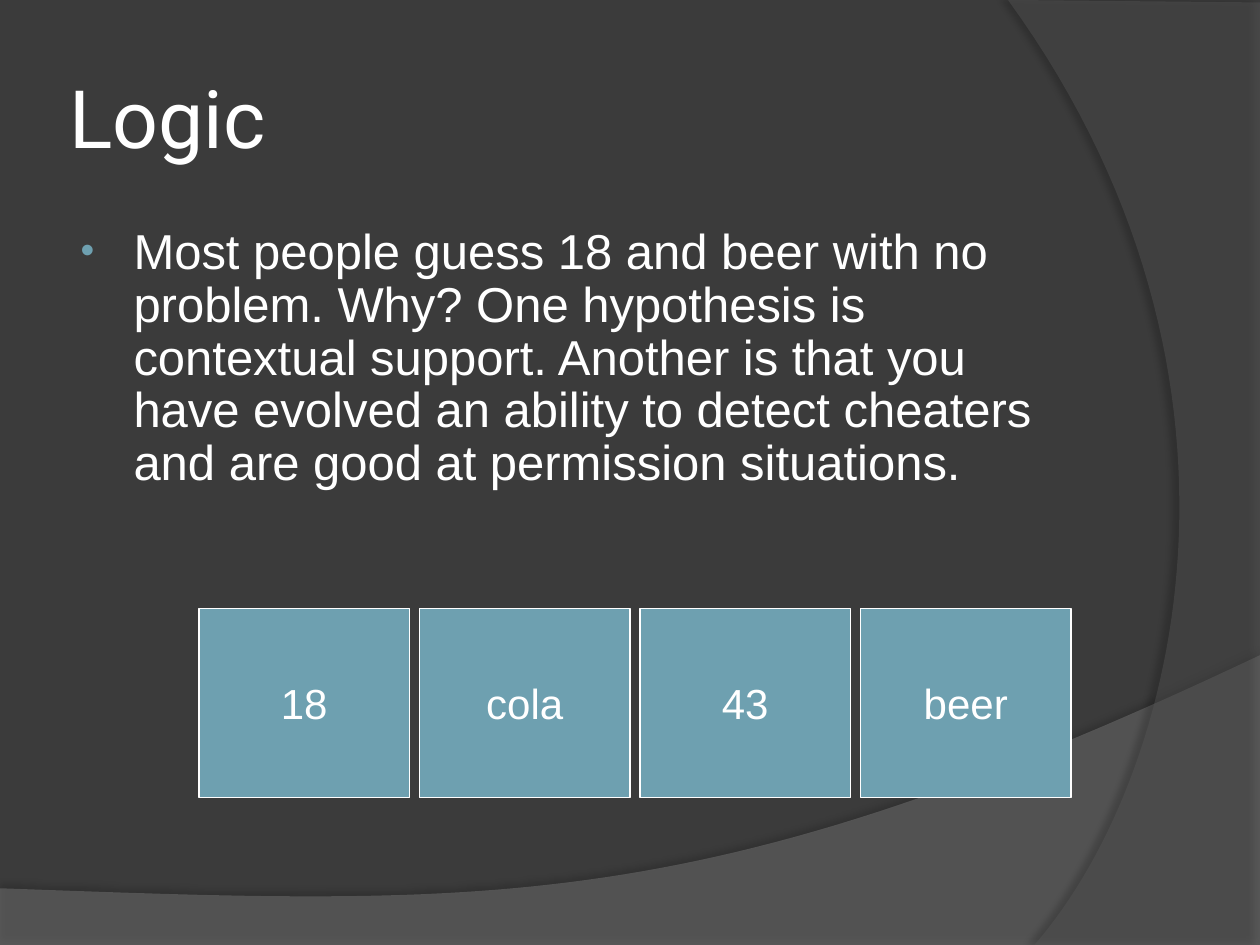
"""Build the Logic slide: a title, one bullet and four cards."""
from dataclasses import dataclass

from lxml import etree
from pptx import Presentation
from pptx import util as u
from pptx.dml.color import RGBColor
from pptx.enum import shapes, text
from pptx.oxml.ns import qn

PX = u.Inches(1) // 100


@dataclass(frozen=True)
class Theme:
    back: str = "3B3B3B"
    wave: str = "7C7C7C"
    arc: str = "595959"
    card: str = "6EA0B0"
    ink: str = "FFFFFF"
    shade: str = "000000"
    head: int = 46
    body: int = 28
    label: int = 24
    face: str = "Arial"
    title: str = "Roboto"


def rgb(code):
    return RGBColor.from_string(code)


def apply(item, form):
    for key, val in form.items():
        setattr(item, key, val)


def node(root, tag, **vals):
    kid = etree.SubElement(root, qn(tag))
    for key, val in vals.items():
        kid.set(key, str(val))
    return kid


def curve(p, q, r, s, steps=60):
    pts = []
    for i in range(1, steps + 1):
        t = i / steps
        mix = ((1 - t) ** 3, 3 * t * (1 - t) ** 2, 3 * t * t * (1 - t), t ** 3)
        pts.append(tuple(sum(m * c for m, c in zip(mix, axis))
                         for axis in zip(p, q, r, s)))
    return pts


class Deck:
    def __init__(self, theme):
        self.theme = theme
        self.pres = Presentation()
        apply(self.pres, {"slide_width": 1000 * PX, "slide_height": 750 * PX})
        self.slide = self.pres.slides.add_slide(self.pres.slide_layouts[1])
        fill = self.slide.background.fill
        fill.solid()
        fill.fore_color.rgb = rgb(theme.back)

    def paint(self, shape, color):
        shape.shadow.inherit = False
        shape.fill.solid()
        shape.fill.fore_color.rgb = rgb(color)

    def letter(self, shape, words, size, face, frame, para):
        apply(shape.text_frame, frame)
        line = shape.text_frame.paragraphs[0]
        apply(line, para)
        run = line.add_run()
        run.text = words
        apply(run.font, {"size": u.Pt(size), "name": face})
        run.font.color.rgb = rgb(self.theme.ink)
        return line

    def sweep(self, pts, color, alpha, shade):
        pts = [(round(x * PX), round(y * PX)) for x, y in pts]
        pen = self.slide.shapes.build_freeform(*pts[0])
        pen.add_line_segments(pts[1:], close=True)
        shape = pen.convert_to_shape()
        self.paint(shape, color)
        shape.line.fill.background()
        props = shape.element.spPr
        node(props.find(".//" + qn("a:srgbClr")), "a:alpha", val=alpha * 1000)
        dense, blur, dist, turn = shade
        cast = node(props.find(qn("a:effectLst")), "a:outerShdw",
                    blurRad=u.Pt(blur), dist=u.Pt(dist), dir=turn * 60000,
                    algn="ctr", rotWithShape=0)
        tone = node(cast, "a:srgbClr", val=self.theme.shade)
        node(tone, "a:alpha", val=dense * 1000)

    def place(self, index, box):
        shape = self.slide.placeholders[index]
        apply(shape, dict(zip(("left", "top", "width", "height"),
                              (n * PX for n in box))))
        self.slide.shapes.element.append(shape.element)
        return shape

    def title(self, words, box):
        sides = ("margin_left", "margin_top", "margin_right", "margin_bottom")
        frame = {"vertical_anchor": text.MSO_ANCHOR.MIDDLE,
                 "auto_size": text.MSO_AUTO_SIZE.NONE,
                 **dict.fromkeys(sides, 5 * PX)}
        self.letter(self.place(0, box), words, self.theme.head,
                    self.theme.title, frame, {"alignment": text.PP_ALIGN.LEFT})

    def bullet(self, words, box):
        line = self.letter(self.place(1, box), words, self.theme.body,
                           self.theme.face,
                           {"auto_size": text.MSO_AUTO_SIZE.NONE},
                           {"line_spacing": 0.9})
        props = line._p.get_or_add_pPr()
        props.set("marL", str(46 * PX))
        props.set("indent", str(-42 * PX))
        node(node(props, "a:buClr"), "a:srgbClr", val=self.theme.card)
        node(props, "a:buSzPct", val=80000)
        node(props, "a:buFont", typeface=self.theme.face)
        node(props, "a:buChar", char="•")

    def cards(self, names, left, top, wide, high, gap):
        group = self.slide.shapes.add_group_shape()
        for i, name in enumerate(names):
            box = (left + i * (wide + gap), top, wide, high)
            card = group.shapes.add_shape(shapes.MSO_SHAPE.RECTANGLE,
                                          *(n * PX for n in box))
            self.paint(card, self.theme.card)
            card.line.color.rgb = rgb(self.theme.ink)
            card.line.width = u.Pt(0.75)
            self.letter(card, name, self.theme.label, self.theme.face,
                        {"vertical_anchor": text.MSO_ANCHOR.MIDDLE,
                         "word_wrap": False},
                        {"alignment": text.PP_ALIGN.CENTER})


def main():
    theme = Theme()
    deck = Deck(theme)
    wave = curve((1000, 520), (559, 729), (391, 719), (0, 705))
    deck.sweep([(0, 705), (0, 751), (1000, 751), (1000, 520), *wave[:-1]],
               theme.wave, 45, (35, 4, 3.5, 270))
    arc = curve((821, 750), (935, 619), (1018, 300), (800, 0))
    deck.sweep([(1000, 2), (1000, 750), (821, 750), *arc],
               theme.arc, 40, (45, 4, 4, 180))
    deck.title("Logic", (50, 30, 817, 125))
    deck.bullet("Most people guess 18 and beer with no problem. Why? "
                "One hypothesis is contextual support. Another is that you "
                "have evolved an ability to detect cheaters and are good at "
                "permission situations.", (50, 175, 817, 495))
    deck.cards(("18", "cola", "43", "beer"), 158, 483, 167, 150, 8)
    deck.pres.save("out.pptx")


if __name__ == "__main__":
    main()
